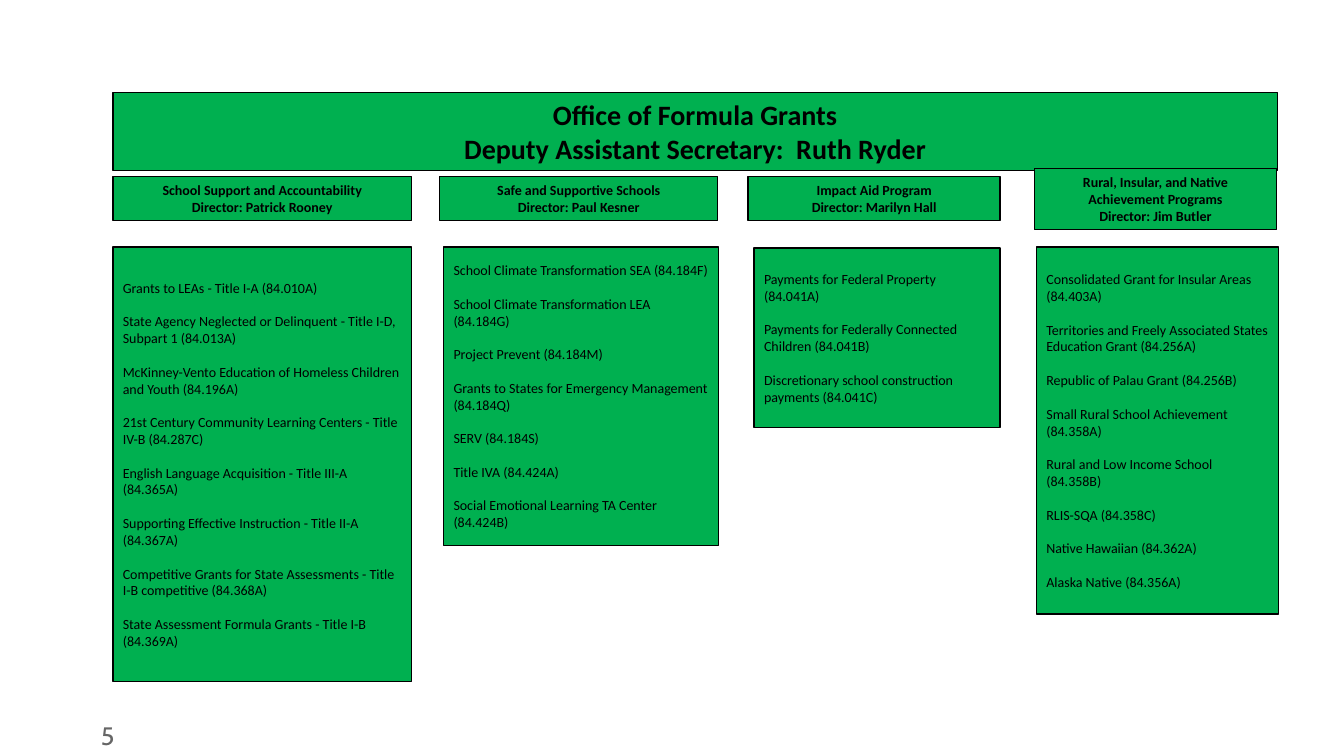
from pptx import Presentation
from pptx import util as u
from pptx.dml.color import RGBColor
from pptx.enum import shapes, text

GREEN, BLACK, GRAY = "00B050", "000000", "666666"

# Each division: name, director, header box, programs box, programs
# Boxes are left, top, width, height in inches
DIVISIONS = [
    ("School Support and Accountability", "Patrick Rooney",
     (1.12, 1.75, 2.96, 0.44), (1.12, 2.45, 2.96, 4.31), [
         "Grants to LEAs - Title I-A (84.010A)",
         "State Agency Neglected or Delinquent - Title I-D, Subpart 1 (84.013A)",
         "McKinney-Vento Education of Homeless Children and Youth (84.196A)",
         "21st Century Community Learning Centers - Title IV-B (84.287C)",
         "English Language Acquisition - Title III-A (84.365A)",
         "Supporting Effective Instruction - Title II-A (84.367A)",
         "Competitive Grants for State Assessments - Title I-B competitive (84.368A)",
         "State Assessment Formula Grants - Title I-B (84.369A)"]),
    ("Safe and Supportive Schools", "Paul Kesner",
     (4.36, 1.75, 2.76, 0.44), (4.4, 2.45, 2.73, 2.96), [
         "School Climate Transformation SEA (84.184F)",
         "School Climate Transformation LEA (84.184G)",
         "Project Prevent (84.184M)",
         "Grants to States for Emergency Management (84.184Q)",
         "SERV (84.184S)",
         "Title IVA (84.424A)",
         "Social Emotional Learning TA Center (84.424B)"]),
    ("Impact Aid Program", "Marilyn Hall",
     (7.42, 1.75, 2.5, 0.44), (7.48, 2.46, 2.44, 1.78), [
         "Payments for Federal Property (84.041A)",
         "Payments for Federally Connected Children (84.041B)",
         "Discretionary school construction payments (84.041C)"]),
    ("Rural, Insular, and Native Achievement Programs", "Jim Butler",
     (10.26, 1.67, 2.4, 0.61), (10.28, 2.45, 2.4, 3.64), [
         "Consolidated Grant for Insular Areas (84.403A)",
         "Territories and Freely Associated States Education Grant (84.256A)",
         "Republic of Palau Grant (84.256B)",
         "Small Rural School Achievement (84.358A)",
         "Rural and Low Income School (84.358B)",
         "RLIS-SQA (84.358C)",
         "Native Hawaiian (84.362A)",
         "Alaska Native (84.356A)"]),
]


def color(target, value):
    target.rgb = RGBColor.from_string(value)


def write(shape, lines, size, font="Calibri", ink=BLACK, bold=False,
          align=text.PP_ALIGN.LEFT, gap=0):
    frame = shape.text_frame
    frame.word_wrap = True
    frame.auto_size = text.MSO_AUTO_SIZE.NONE
    for index, line in enumerate(lines):
        para = frame.add_paragraph() if index else frame.paragraphs[0]
        para.text = line
        para.alignment = align
        para.space_before = u.Pt(gap if index else 0)
        para.font.name, para.font.size, para.font.bold = font, u.Pt(size), bold
        color(para.font.color, ink)


def paint(shape):
    shape.fill.solid()
    color(shape.fill.fore_color, GREEN)
    shape.line.width = u.Pt(1)
    color(shape.line.color, BLACK)
    shape.text_frame.vertical_anchor = text.MSO_ANCHOR.MIDDLE


def add_panel(page, box):
    panel = page.shapes.add_shape(shapes.MSO_SHAPE.RECTANGLE, *map(u.Inches, box))
    panel.shadow.inherit = False
    paint(panel)
    return panel


# Office banner
def place_banner(page, box):
    title = page.shapes.title
    title.left, title.top, title.width, title.height = map(u.Inches, box)
    paint(title)
    write(title, ["Office of Formula Grants", "Deputy Assistant Secretary:  Ruth Ryder"],
          20, bold=True, align=text.PP_ALIGN.CENTER)


# Division header with its list of programs
def add_division(page, name, director, header_box, programs_box, programs):
    write(add_panel(page, header_box), [name, f"Director: {director}"],
          10, bold=True, align=text.PP_ALIGN.CENTER)
    write(add_panel(page, programs_box), programs, 10, gap=12)


# Page number
def add_page_number(page, box, number):
    label = page.shapes.add_textbox(*map(u.Inches, box))
    label.text_frame.margin_left = label.text_frame.margin_right = 0
    write(label, [str(number)], 18, font="Cabin", ink=GRAY)


def main():
    deck = Presentation()
    deck.slide_width, deck.slide_height = u.Inches(13.33), u.Inches(7.5)
    page = deck.slides.add_slide(deck.slide_layouts.get_by_name("Title Only"))
    place_banner(page, (1.12, 0.92, 11.55, 0.77))
    for division in DIVISIONS:
        add_division(page, *division)
    add_page_number(page, (1, 7.1, 0.78, 0.4), 5)
    deck.save("out.pptx")


if __name__ == "__main__":
    main()
